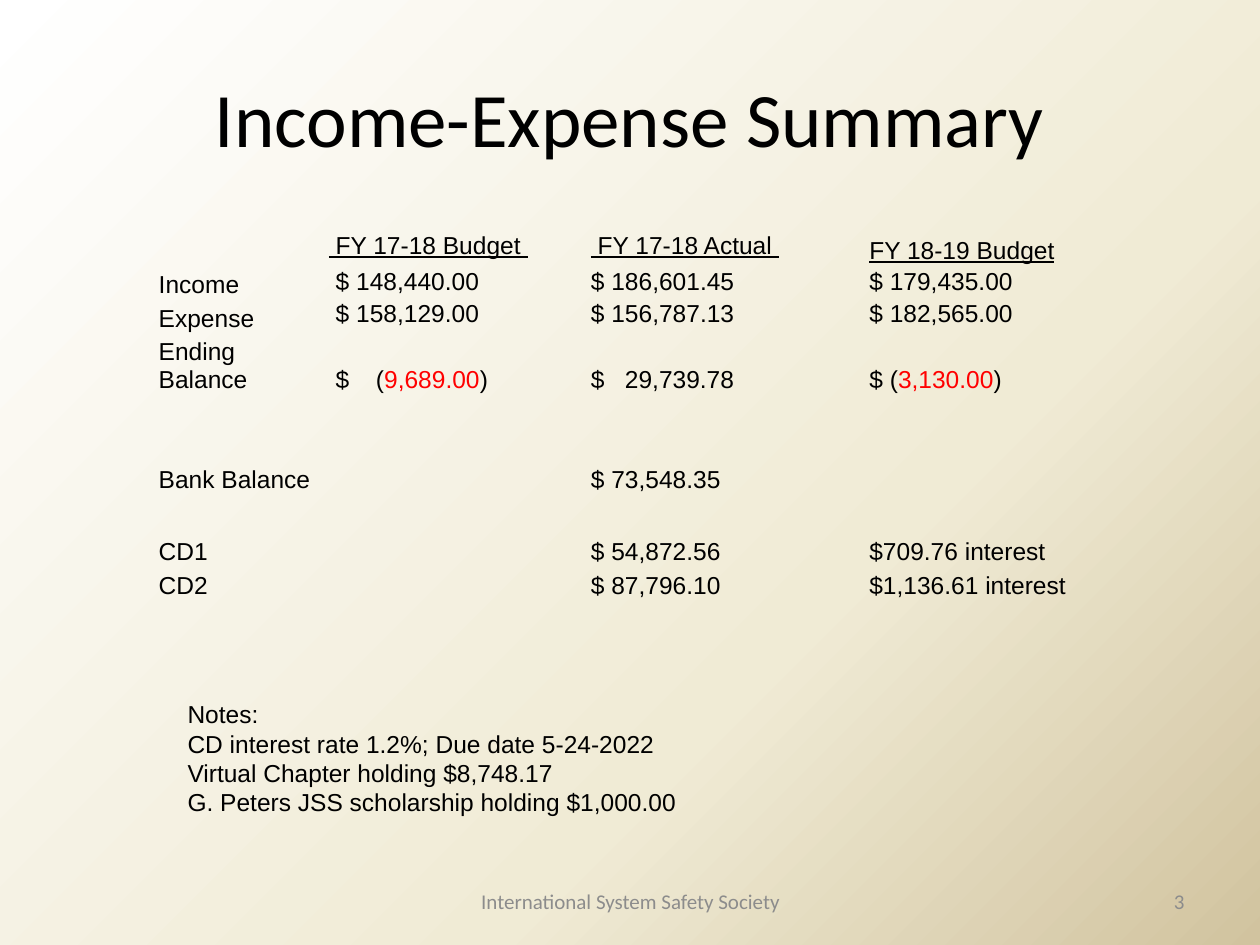
from copy import deepcopy
from dataclasses import dataclass

from lxml import etree
from pptx import Presentation
from pptx.dml.color import RGBColor
from pptx.enum.text import MSO_ANCHOR, PP_ALIGN
from pptx.oxml.ns import qn
from pptx.util import Inches, Pt

TOP, MIDDLE, BOTTOM = MSO_ANCHOR.TOP, MSO_ANCHOR.MIDDLE, MSO_ANCHOR.BOTTOM
LEFT, CENTER, RIGHT = PP_ALIGN.LEFT, PP_ALIGN.CENTER, PP_ALIGN.RIGHT
NO_GRID_STYLE = "{2D5ABB26-0587-4C30-8999-92F81FD0307C}"
WIDTH, HEIGHT = Inches(10), Inches(7.5)
GRID_COLUMNS, GRID_ROWS = 100, 75


@dataclass(frozen=True)
class Style:
    font: str
    size: int
    color: RGBColor


class Theme:
    black = RGBColor(0, 0, 0)
    negative = RGBColor(0xFF, 0, 0)
    title = Style("Calibri", 44, black)
    body = Style("Arial", 14, black)
    footer = Style("Calibri", 12, RGBColor(0x8C, 0x8C, 0x8C))
    backdrop = [(0, "FFFFFF"), (0.65, "F0EBD5"), (1, "D1C39F")]


COLUMN_WIDTHS = [13.5, 20.8, 22.1, 18.8]
ROW_HEIGHTS = [2.7, 2.75, 2.7, 4.5, 2.85, 2.85, 5.3, 2.7, 2.7, 2.7]
SUMMARY = [
    ["", " FY 17-18 Budget ", " FY 17-18 Actual ", "FY 18-19 Budget"],
    ["Income", " $ 148,440.00", "$ 186,601.45", "$ 179,435.00"],
    ["Expense", " $ 158,129.00", "$ 156,787.13", "$ 182,565.00"],
    ["Ending Balance", " $\t(|9,689.00|)", "$\t29,739.78", "$ (|3,130.00|)"],
    [""] * 4,
    [""] * 4,
    ["Bank Balance", "", "$ 73,548.35", ""],
    ["CD1", "", "$ 54,872.56", "$709.76 interest"],
    ["CD2", "", "$ 87,796.10", "$1,136.61 interest"],
    [""] * 4,
]
ANCHORS = {
    0: [TOP, TOP, TOP, BOTTOM],
    1: [BOTTOM, MIDDLE, MIDDLE, MIDDLE],
    2: [BOTTOM, TOP, TOP, TOP],
    6: [TOP] * 4,
}
TAB_STOPS = {1: 3.74, 2: 2.7}
NOTES = [
    "Notes:",
    "CD interest rate 1.2%; Due date 5-24-2022",
    "Virtual Chapter holding $8,748.17",
    "G. Peters JSS scholarship holding $1,000.00",
]


def across(columns):
    return round(WIDTH * columns / GRID_COLUMNS)


def down(rows):
    return round(HEIGHT * rows / GRID_ROWS)


def place(box):
    left, top, width, height = box
    return across(left), down(top), across(width), down(height)


def style_span(span, style, color=None):
    span.font.name = style.font
    span.font.size = Pt(style.size)
    span.font.color.rgb = color or style.color


def paint_backdrop(page):
    fill = page.background.fill
    fill.gradient()
    fill.gradient_angle = 315
    stop_list = page._element.find(".//" + qn("a:gsLst"))
    stop_list.append(deepcopy(stop_list[0]))
    for stop, (position, color) in zip(fill.gradient_stops, Theme.backdrop):
        stop.position = position
        stop.color.rgb = RGBColor.from_string(color)


def add_text(page, box, lines, style, align=LEFT, anchor=MIDDLE, wrap=True):
    frame = page.shapes.add_textbox(*place(box)).text_frame
    frame.word_wrap = wrap
    frame.vertical_anchor = anchor
    frame.text = "\n".join(lines)
    for para in frame.paragraphs:
        para.alignment = align
        for span in para.runs:
            style_span(span, style)


def fill_cell(cell, text, anchor, tab_stop, underline):
    cell.fill.background()
    cell.vertical_anchor = anchor
    cell.margin_left = cell.margin_right = cell.margin_top = Inches(0.01)
    cell.margin_bottom = 0
    para = cell.text_frame.paragraphs[0]
    if not text:
        etree.SubElement(para._p, qn("a:endParaRPr"), sz=str(Theme.body.size * 100))
        return
    if "\t" in text:
        tabs = etree.SubElement(para._p.get_or_add_pPr(), qn("a:tabLst"))
        etree.SubElement(tabs, qn("a:tab"), pos=str(across(tab_stop)), algn="l")
    for index, part in enumerate(text.split("|")):
        span = para.add_run()
        span.text = part
        style_span(span, Theme.body, Theme.negative if index == 1 else None)
        span.font.underline = underline


def add_summary_table(page, box):
    shape = page.shapes.add_table(len(SUMMARY), len(COLUMN_WIDTHS), *place(box))
    table = shape.table
    table.first_row = table.horz_banding = False
    table._tbl.tblPr.find(qn("a:tableStyleId")).text = NO_GRID_STYLE
    for column, width in zip(table.columns, COLUMN_WIDTHS):
        column.width = across(width)
    for row, height in zip(table.rows, ROW_HEIGHTS):
        row.height = down(height)
    for row, texts in enumerate(SUMMARY):
        anchors = ANCHORS.get(row, [BOTTOM] * len(texts))
        for column, text in enumerate(texts):
            fill_cell(table.cell(row, column), text, anchors[column],
                      TAB_STOPS.get(column), row == 0)


def add_footer(page, box):
    left, top, width, height = box
    add_text(page, (left + 29.2, top, 31.7, height),
             ["International System Safety Society"], Theme.footer, CENTER)
    add_text(page, (left + width - 23.3, top, 23.3, height), ["3"], Theme.footer, RIGHT)


def main():
    deck = Presentation()
    deck.slide_width, deck.slide_height = WIDTH, HEIGHT
    page = deck.slides.add_slide(deck.slide_layouts[6])
    paint_backdrop(page)
    add_text(page, (5, 3, 90, 12.5), ["Income-Expense Summary"], Theme.title, CENTER)
    add_summary_table(page, (12.5, 18.3, sum(COLUMN_WIDTHS), sum(ROW_HEIGHTS)))
    add_text(page, (13.9, 55, 41, 10.4), NOTES, Theme.body, anchor=TOP, wrap=False)
    add_footer(page, (5, 69.5, 90, 4))
    deck.save("out.pptx")


if __name__ == "__main__":
    main()
